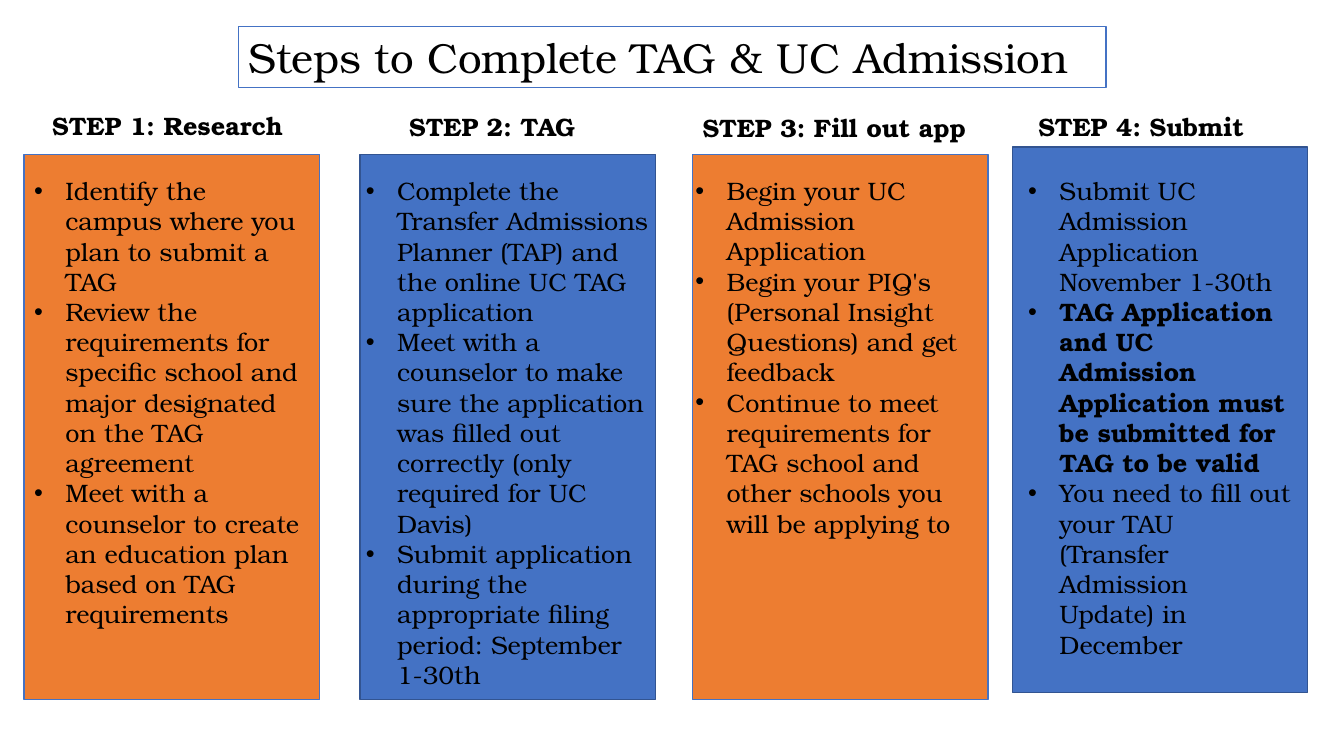
from dataclasses import dataclass

from lxml import etree
from pptx import Presentation
from pptx import util as u
from pptx.dml.color import RGBColor
from pptx.enum import shapes, text
from pptx.oxml.ns import qn


@dataclass(frozen=True)
class Theme:
    """Colours, font and type sizes of the slide."""
    font: str = "TeX Gyre Bonum"
    ink: str = "000000"
    orange: str = "ED7D31"
    blue: str = "4472C4"
    navy: str = "325491"
    title: int = 30
    body: int = 18


class StepSlide:
    """Draws titles, panels and bullet lists on one slide."""

    def __init__(self, slide, theme):
        self.shapes = slide.shapes
        self.theme = theme

    def panel(self, left, top, fill, line):
        sp = self.shapes.add_shape(
            shapes.MSO_SHAPE.RECTANGLE,
            u.Inches(left), u.Inches(top), u.Inches(2.93), u.Inches(5.41))
        sp.shadow.inherit = False
        sp.fill.solid()
        sp.fill.fore_color.rgb = RGBColor.from_string(fill)
        sp.line.color.rgb = RGBColor.from_string(line)
        sp.line.width = u.Pt(1)

    def text(self, box, lines, size, bold=()):
        sp = self.shapes.add_textbox(*[u.Inches(n) for n in box])
        tf = sp.text_frame
        tf.text = "\n".join(lines)
        tf.word_wrap = True
        tf.auto_size = text.MSO_AUTO_SIZE.SHAPE_TO_FIT_TEXT
        for i, p in enumerate(tf.paragraphs):
            for r in p.runs:
                r.font.name = self.theme.font
                r.font.size = u.Pt(size)
                r.font.bold = i in bold
                r.font.color.rgb = RGBColor.from_string(self.theme.ink)
        return sp

    def title(self, box, words):
        sp = self.text(box, [words], self.theme.title)
        sp.line.color.rgb = RGBColor.from_string(self.theme.blue)
        sp.line.width = u.Pt(0.75)

    def heading(self, box, words):
        self.text(box, [words], self.theme.body, bold=(0,))

    def bullets(self, box, items, bold=()):
        sp = self.text(box, items, self.theme.body, bold)
        indent = u.Inches(0.31)
        for p in sp.text_frame.paragraphs:
            pPr = p._p.get_or_add_pPr()
            pPr.set("marL", str(indent))
            pPr.set("indent", str(-indent))
            etree.SubElement(pPr, qn("a:buFont"), typeface="Arial")
            etree.SubElement(pPr, qn("a:buChar"), char="•")


@dataclass(frozen=True)
class Step:
    """One column: its panel, heading and bullet list."""
    panel: tuple
    heading: str
    heading_box: tuple
    items: tuple
    items_box: tuple
    bold: tuple = ()


STEPS = [
    Step((0.24, 1.53), "STEP 1: Research", (0.42, 1.05, 3, 0.4), (
        "Identify the campus where you plan to submit a TAG",
        "Review the requirements for specific school and major designated on the TAG agreement",
        "Meet with a counselor to create an education plan based on TAG requirements",
    ), (0.24, 1.69, 2.93, 4.95)),
    Step((3.57, 1.53), "STEP 2: TAG", (3.96, 1.06, 3, 0.4), (
        "Complete the Transfer Admissions Planner (TAP) and the online UC TAG application ",
        "Meet with a counselor to make sure the application was filled out correctly (only required for UC Davis)",
        "Submit application during the appropriate filing period: September 1-30th",
    ), (3.53, 1.69, 3.05, 5.55)),
    Step((6.87, 1.53), "STEP 3: Fill out app", (6.87, 1.07, 2.93, 0.4), (
        "Begin your UC Admission Application",
        "Begin your PIQ's (Personal Insight Questions) and get feedback",
        "Continue to meet  requirements for TAG school and other schools you will be applying to",
    ), (6.8, 1.69, 3, 4.34)),
    Step((10.04, 1.46), "STEP 4: Submit", (10.2, 1.06, 3.36, 0.4), (
        "Submit UC Admission Application November 1-30th",
        "TAG Application and UC Admission Application must be submitted for  TAG to be valid",
        "You need to fill out your TAU (Transfer Admission Update) in December",
    ), (10.1, 1.69, 2.8, 4.95), (1,)),
]


def main():
    """Build the slide and save it."""
    prs = Presentation()
    prs.slide_width, prs.slide_height = u.Inches(13.33), u.Inches(7.5)
    theme = Theme()
    s = StepSlide(prs.slides.add_slide(prs.slide_layouts[6]), theme)
    styles = [(theme.orange, theme.blue), (theme.blue, theme.navy)]
    for i, step in enumerate(STEPS):
        s.panel(*step.panel, *styles[i % 2])
    for step in STEPS:
        s.bullets(step.items_box, step.items, step.bold)
    s.title((2.37, 0.26, 8.6, 0.61), "Steps to Complete TAG & UC Admission")
    for step in STEPS:
        s.heading(step.heading_box, step.heading)
    prs.save("out.pptx")


if __name__ == "__main__":
    main()
